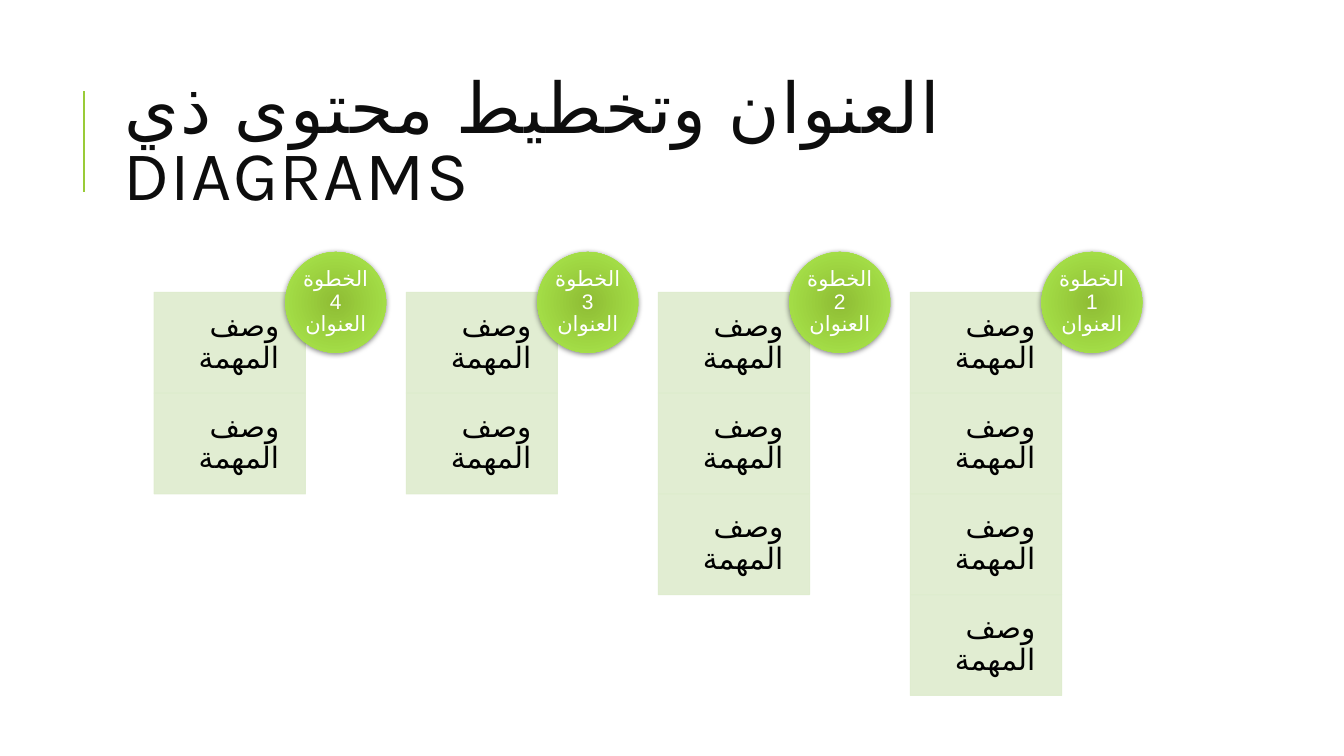
"""Build a right-to-left slide of four steps with stacked tasks."""
from pptx import Presentation
from pptx.dml.color import RGBColor
from pptx.enum import lang, shapes, text
from pptx.oxml import parse_xml
from pptx.oxml.ns import nsdecls, qn
from pptx.util import Inches, Pt

TITLE = "العنوان وتخطيط محتوى ذي DIAGRAMS"
TASK = "وصف المهمة"
STEPS = [
    ("الخطوة 1 العنوان", 4),
    ("الخطوة 2 العنوان", 3),
    ("الخطوة 3 العنوان", 2),
    ("الخطوة 4 العنوان", 2),
]

FONT, SCRIPT = "Karla", "Arial"
INK = RGBColor(0x0D, 0x0D, 0x0D)
BLACK = RGBColor(0, 0, 0)
WHITE = RGBColor(255, 255, 255)
LIME = RGBColor(0x99, 0xCB, 0x38)
PALE = RGBColor(0xDE, 0xEC, 0xCE)
DARK = RGBColor(0x8F, 0xBD, 0x34)
LIGHT = RGBColor(0xAC, 0xEB, 0x4E)

RIGHT, TOP, PITCH = 9.03, 2.9, 2.5
WIDE, TALL, DISC = 1.5, 1, 1
NS = nsdecls("a")
GLOW = (f'<a:path {NS} path="circle"><a:fillToRect l="100000" t="100000" '
        'r="100000" b="100000"/></a:path>')
SHADE = (f'<a:outerShdw {NS} blurRad="50800" dist="12700" dir="5400000" '
         'rotWithShape="0"><a:srgbClr val="000000"><a:alpha val="50000"/>'
         '</a:srgbClr></a:outerShdw>')


def write(shape, words, size, color, align, pads, ls):
    frame = shape.text_frame
    frame.text = words
    frame.word_wrap = True
    frame.vertical_anchor = text.MSO_ANCHOR.MIDDLE
    (frame.margin_left, frame.margin_top,
     frame.margin_right, frame.margin_bottom) = map(Inches, pads)
    para = frame.paragraphs[0]
    para.alignment = align
    para.line_spacing = ls
    para._p.get_or_add_pPr().set("rtl", "1")
    font = para.runs[0].font
    font.name, font.size, font.color.rgb = FONT, Pt(size), color
    font.language_id = lang.MSO_LANGUAGE_ID.ARABIC
    font._element.set("lang", "ar-SA")
    font._element.append(parse_xml(f'<a:cs {NS} typeface="{SCRIPT}"/>'))


def fade(fill):
    for tint in fill.iter(qn("a:srgbClr")):
        tint.append(parse_xml(f'<a:alpha {NS} val="90000"/>'))


def add_task(slide, x, y):
    box = slide.shapes.add_shape(
        shapes.MSO_SHAPE.RECTANGLE, Inches(x), Inches(y), Inches(WIDE), Inches(TALL))
    box.shadow.inherit = False
    box.fill.solid()
    box.fill.fore_color.rgb = PALE
    box.line.color.rgb = PALE
    box.line.width = Pt(0.75)
    fade(box._element.spPr)
    write(box, TASK, 21, BLACK, text.PP_ALIGN.RIGHT, (0.16, 0.16, 0.26, 0.16), 0.9)


def add_disc(slide, x, y, words):
    disc = slide.shapes.add_shape(
        shapes.MSO_SHAPE.OVAL, Inches(x), Inches(y), Inches(DISC), Inches(DISC))
    disc.line.fill.background()
    disc.fill.gradient()
    for stop, color in zip(disc.fill.gradient_stops, (DARK, LIGHT)):
        stop.color.rgb = color
    props = disc._element.spPr
    grad = props.find(qn("a:gradFill"))
    grad.replace(grad.find(qn("a:lin")), parse_xml(GLOW))
    disc.shadow.inherit = False
    props.find(qn("a:effectLst")).append(parse_xml(SHADE))
    write(disc, words, 15, WHITE, text.PP_ALIGN.CENTER, (0, 0, 0, 0), 0.9)


def main():
    deck = Presentation()
    deck.slide_width, deck.slide_height = Inches(13.33), Inches(7.5)
    slide = deck.slides.add_slide(deck.slide_layouts[5])

    rule = slide.shapes.add_connector(
        shapes.MSO_CONNECTOR.STRAIGHT, Inches(0.83), Inches(1.9), Inches(0.83), Inches(0.9))
    rule.line.color.rgb = LIME
    rule.line.width = Pt(1.5)
    rule._element.spPr.append(parse_xml(f"<a:effectLst {NS}/>"))

    title = slide.shapes.title
    title.left, title.top = Inches(1.12), Inches(0.64)
    title.width, title.height = Inches(10.63), Inches(1.64)
    write(title, TITLE, 50, INK, text.PP_ALIGN.LEFT, (0.1, 0.05, 0.6, 0.05), 0.8)
    title.text_frame.auto_size = text.MSO_AUTO_SIZE.NONE
    title.text_frame.paragraphs[0].runs[0].font._element.set("spc", "100")

    for col, (name, count) in enumerate(STEPS):
        x = RIGHT - col * PITCH
        for row in range(count):
            add_task(slide, x, TOP + row * TALL)
        add_disc(slide, x + 1.3, TOP - 0.4, name)

    deck.save("out.pptx")


if __name__ == "__main__":
    main()
